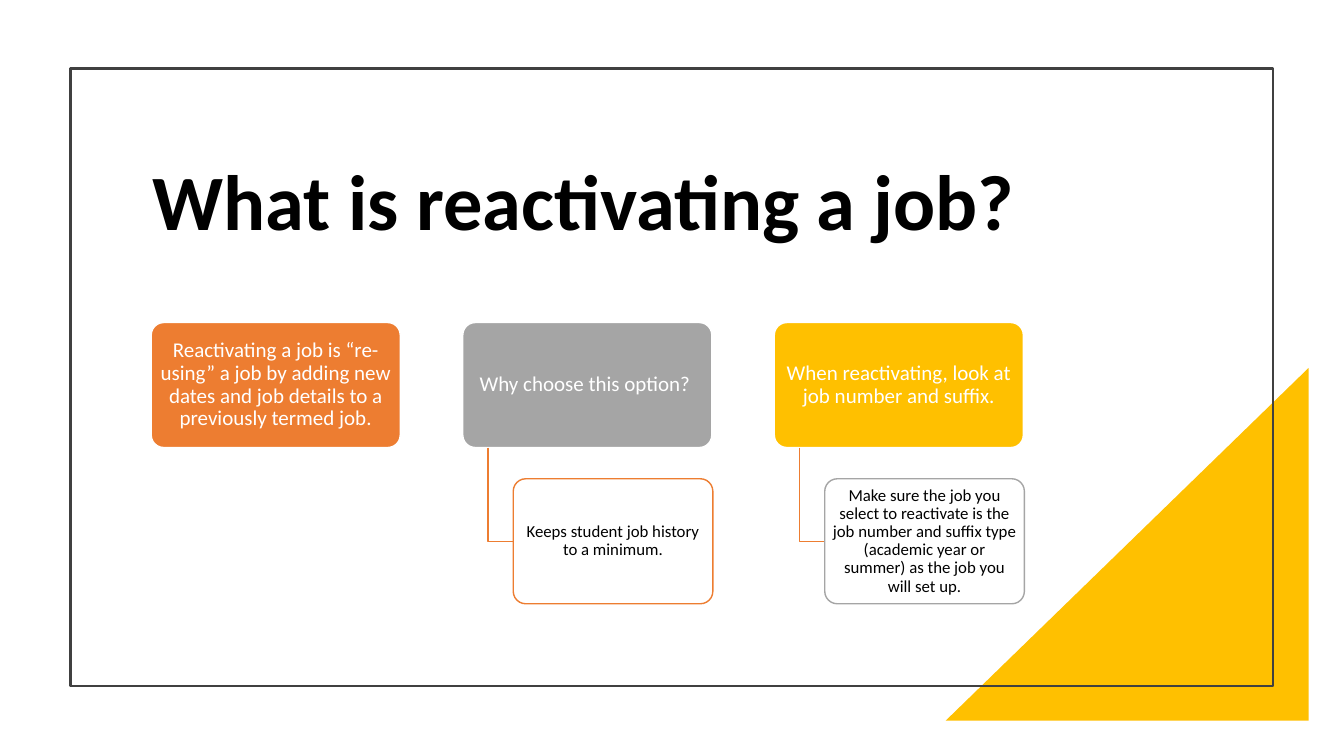
from pptx import Presentation
from pptx.dml.color import RGBColor
from pptx.enum.shapes import MSO_SHAPE as Kind
from pptx.enum.text import MSO_ANCHOR as Anchor, PP_ALIGN as Align
from pptx.oxml.ns import qn
from pptx.util import Inches, Pt
from lxml.etree import SubElement

# Content
TITLE = "What is reactivating a job?"
FONT = "Calibri"
ORANGE, GREY, GOLD = "ED7D31", "A5A5A5", "FFC000"
WHITE, BLACK, DARK = "FFFFFF", "000000", "404040"
# head text, head fill, detail text, detail line
TOPICS = [
    ("Reactivating a job is “re-using” a job by adding new dates and job "
     "details to a previously termed job.", ORANGE, None, None),
    ("Why choose this option? ", GREY,
     "Keeps student job history to a minimum.", ORANGE),
    ("When reactivating, look at job number and suffix.", GOLD,
     "Make sure the job you select to reactivate is the job number and "
     "suffix type (academic year or summer) as the job you will set up.", GREY),
]

# Layout in inches
LEFT, TOP, STEP = 1.5, 3.2, 3.09
HEAD_W, BOX_H, GAP = 2.47, 1.24, 0.31
DETAIL_W, INDENT = 1.98, 0.25

deck = Presentation()
deck.slide_width, deck.slide_height = Inches(13.33), Inches(7.5)
slide = deck.slides.add_slide(deck.slide_layouts[6])
shapes = slide.shapes


def color(code):
    return RGBColor.from_string(code)


def paint(shape, fill=None, line=None, width=1):
    shape.shadow.inherit = False
    if fill:
        shape.fill.solid()
        shape.fill.fore_color.rgb = color(fill)
    else:
        shape.fill.background()
    if line:
        shape.line.color.rgb = color(line)
        shape.line.width = Pt(width)
    else:
        shape.line.fill.background()


def add_box(kind, x, y, w, h, **look):
    shape = shapes.add_shape(kind, Inches(x), Inches(y), Inches(w), Inches(h))
    paint(shape, **look)
    return shape


def write(shape, text, size, ink, bold=False):
    frame = shape.text_frame
    frame.word_wrap = True
    frame.vertical_anchor = Anchor.MIDDLE
    para = frame.paragraphs[0]
    para.line_spacing = 0.9
    run = para.add_run()
    run.text = text
    font = run.font
    font.name, font.size, font.bold = FONT, Pt(size), bold
    font.color.rgb = color(ink)
    return para


def add_card(x, y, w, text, size, ink, fill, line):
    card = add_box(Kind.ROUNDED_RECTANGLE, x, y, w, BOX_H, fill=fill, line=line)
    card.adjustments[0] = 0.1
    frame = card.text_frame
    frame.margin_left = frame.margin_right = Inches(0.03)
    frame.margin_top = frame.margin_bottom = Inches(0.02)
    write(card, text, size, ink).alignment = Align.CENTER
    return card


def add_elbow(x, y, w, h):
    path = shapes.build_freeform(Inches(x), Inches(y))
    path.add_line_segments([(Inches(x), Inches(y + h)),
                            (Inches(x + w), Inches(y + h))], close=False)
    paint(path.convert_to_shape(), line=ORANGE)


# Corner triangle and frame
corner = add_box(Kind.RIGHT_TRIANGLE, 9.38, 3.65, 3.6, 3.5, fill=GOLD)
corner.element.spPr.find(qn("a:xfrm")).set("flipH", "1")
add_box(Kind.RECTANGLE, 0.7, 0.68, 11.93, 6.13, line=DARK, width=1.5)

# Title
title = shapes.add_textbox(Inches(1.41), Inches(1.15), Inches(8.83), Inches(1.77))
write(title, TITLE, 56, BLACK, bold=True)

# Topic columns
for i, (head, fill, detail, edge) in enumerate(TOPICS):
    x = LEFT + i * STEP
    add_card(x, TOP, HEAD_W, head, 15, WHITE, fill, WHITE)
    if detail:
        base = TOP + BOX_H
        add_elbow(x + INDENT, base, INDENT, GAP + BOX_H / 2)
        card = add_card(x + 2 * INDENT, base + GAP, DETAIL_W, detail, 12,
                        BLACK, WHITE, edge)
        tint = card.element.spPr.find(qn("a:solidFill"))[0]
        SubElement(tint, qn("a:alpha")).set("val", "90000")

deck.save("out.pptx")
